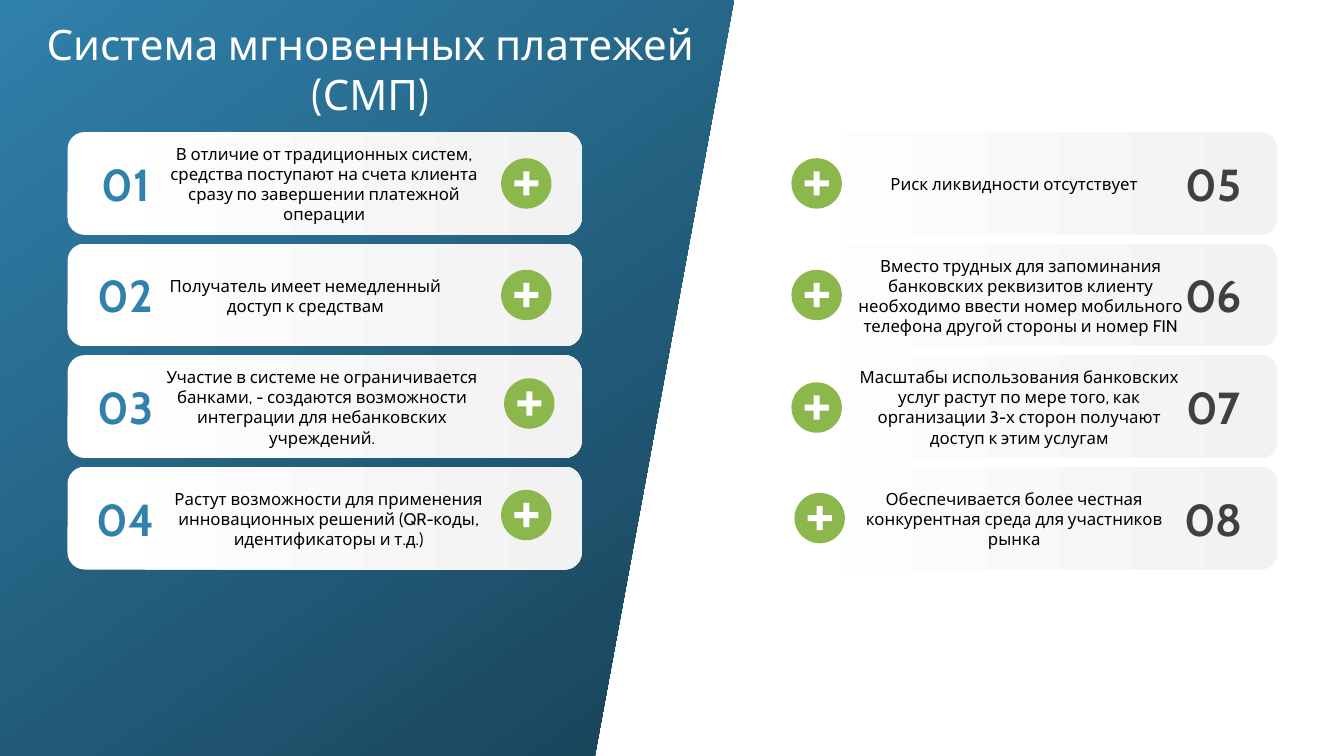
from dataclasses import dataclass

from pptx import Presentation
from pptx.dml.color import RGBColor
from pptx.enum.shapes import MSO_SHAPE
from pptx.enum.text import MSO_ANCHOR, PP_ALIGN
from pptx.util import Inches, Pt

ROUNDED, OVAL, RECT = MSO_SHAPE.ROUNDED_RECTANGLE, MSO_SHAPE.OVAL, MSO_SHAPE.RECTANGLE
MIDDLE, TOP = MSO_ANCHOR.MIDDLE, MSO_ANCHOR.TOP
CENTER = PP_ALIGN.CENTER


@dataclass(frozen=True)
class Theme:
    """Colours, font and type sizes of the slide."""
    font: str = "Cabin"
    blue: str = "3081AC"
    navy: str = "184156"
    green: str = "8BB74C"
    white: str = "FFFFFF"
    pale: str = "F2F2F2"
    gray: str = "404040"
    black: str = "000000"
    title: int = 30
    number: int = 32
    body: int = 12


THEME = Theme()
CARD_W, CARD_H = 5.1, 1.02
FIRST_TOP, LAST_TOP = 1.31, 4.63
BADGE, BAR_W, BAR_H = 0.5, 0.06, 0.24

# Each card: text, text left, text width, badge left, badge top, all from the card corner.
LEFT_CARDS = [
    ("В отличие от традиционных систем, средства поступают на счета клиента "
     "сразу по завершении платежной операции", 0.87, 3.35, 4.3, 0.26),
    ("Получатель имеет немедленный доступ к средствам", 0.87, 2.98, 4.3, 0.26),
    ("Участие в системе не ограничивается банками, - создаются возможности "
     "интеграции для небанковских учреждений.", 0.87, 3.31, 4.33, 0.23),
    ("Растут возможности для применения инновационных решений (QR-коды, "
     "идентификаторы и т.д.)", 1.0, 3.18, 4.3, 0.23),
]
RIGHT_CARDS = [
    ("Риск ликвидности отсутствует", 0.94, 3.1, 0.28, 0.26),
    ("Вместо трудных для запоминания банковских реквизитов клиенту необходимо "
     "ввести номер мобильного телефона другой стороны и номер FIN",
     0.94, 3.23, 0.28, 0.26),
    ("Масштабы использования банковских услуг растут по мере того, как "
     "организации 3-х сторон получают доступ к этим услугам", 0.91, 3.26, 0.28, 0.27),
    ("Обеспечивается более честная конкурентная среда для участников рынка",
     0.94, 3.1, 0.31, 0.26),
]


def rgb(color):
    """Turn a hex string into a colour."""
    return RGBColor.from_string(color)


def style_plain(s):
    """Remove the outline and shadow of a shape."""
    s.line.fill.background()
    s.shadow.inherit = False


def fill_gradient(s, start, end, angle, first=0):
    """Fill a shape with a two-stop linear gradient."""
    s.fill.gradient()
    s.fill.gradient_angle = angle
    for stop, color, pos in zip(s.fill.gradient_stops, (start, end), (first, 1)):
        stop.color.rgb = rgb(color)
        stop.position = pos


def add_shape(shapes, kind, x, y, w, h):
    """Add a plain preset shape."""
    s = shapes.add_shape(kind, Inches(x), Inches(y), Inches(w), Inches(h))
    style_plain(s)
    return s


def add_text(slide, text, x, y, w, h, size, color, bold=False, anchor=MIDDLE, inset=(0, 0)):
    """Add a centred, wrapping text box."""
    s = slide.shapes.add_textbox(Inches(x), Inches(y), Inches(w), Inches(h))
    tf = s.text_frame
    tf.word_wrap = True
    tf.vertical_anchor = anchor
    tf.margin_left = tf.margin_right = Inches(inset[0])
    tf.margin_top = tf.margin_bottom = Inches(inset[1])
    p = tf.paragraphs[0]
    p.text = text
    p.alignment = CENTER
    p.font.name = THEME.font
    p.font.size = Pt(size)
    p.font.bold = bold
    p.font.color.rgb = rgb(color)


def add_panel(slide, top_w, bottom_w, h):
    """Draw the slanted blue panel from the slide corner."""
    builder = slide.shapes.build_freeform(0, 0)
    corners = [(top_w, 0), (bottom_w, h), (0, h)]
    builder.add_line_segments([(Inches(x), Inches(y)) for x, y in corners])
    s = builder.convert_to_shape()
    style_plain(s)
    fill_gradient(s, THEME.blue, THEME.navy, 305)


def add_badge(slide, x, y):
    """Draw a green circle with a white plus sign."""
    shapes = slide.shapes.add_group_shape().shapes
    s = add_shape(shapes, OVAL, x, y, BADGE, BADGE)
    s.fill.solid()
    s.fill.fore_color.rgb = rgb(THEME.green)
    for rotation in (0, 90):
        s = add_shape(shapes, RECT, x + (BADGE - BAR_W) / 2, y + (BADGE - BAR_H) / 2,
                      BAR_W, BAR_H)
        s.rotation = rotation
        s.fill.solid()
        s.fill.fore_color.rgb = rgb(THEME.white)


def add_card(slide, x, y, number, number_x, number_color, card):
    """Draw one numbered card with its text and badge."""
    text, text_x, text_w, badge_x, badge_y = card
    s = add_shape(slide.shapes, ROUNDED, x, y, CARD_W, CARD_H)
    fill_gradient(s, THEME.white, THEME.pale, 0, 0.01)
    add_text(slide, f"{number:02d}", x + number_x, y + 0.26, 0.59, 0.5,
             THEME.number, number_color, bold=True)
    add_text(slide, text, x + text_x, y + 0.21, text_w, 0.61, THEME.body, THEME.black)
    add_badge(slide, x + badge_x, y + badge_y)


def add_column(slide, x, first, number_x, number_color, cards):
    """Stack cards at an equal pitch."""
    pitch = (LAST_TOP - FIRST_TOP) / (len(cards) - 1)
    for i, card in enumerate(cards):
        add_card(slide, x, FIRST_TOP + i * pitch, first + i, number_x, number_color, card)


def main():
    """Build and save the slide."""
    prs = Presentation()
    prs.slide_width, prs.slide_height = Inches(13.33), Inches(7.5)
    slide = prs.slides.add_slide(prs.slide_layouts[6])
    add_panel(slide, 7.28, 5.9, 7.5)
    add_column(slide, 0.67, 1, 0.28, THEME.blue, LEFT_CARDS)
    add_column(slide, 7.57, 5, 4.17, THEME.gray, RIGHT_CARDS)
    add_text(slide, "Система мгновенных платежей (СМП)", 0.21, 0.13, 6.93, 1.11,
             THEME.title, THEME.white, anchor=TOP, inset=(0.1, 0.05))
    prs.save("out.pptx")


if __name__ == "__main__":
    main()
